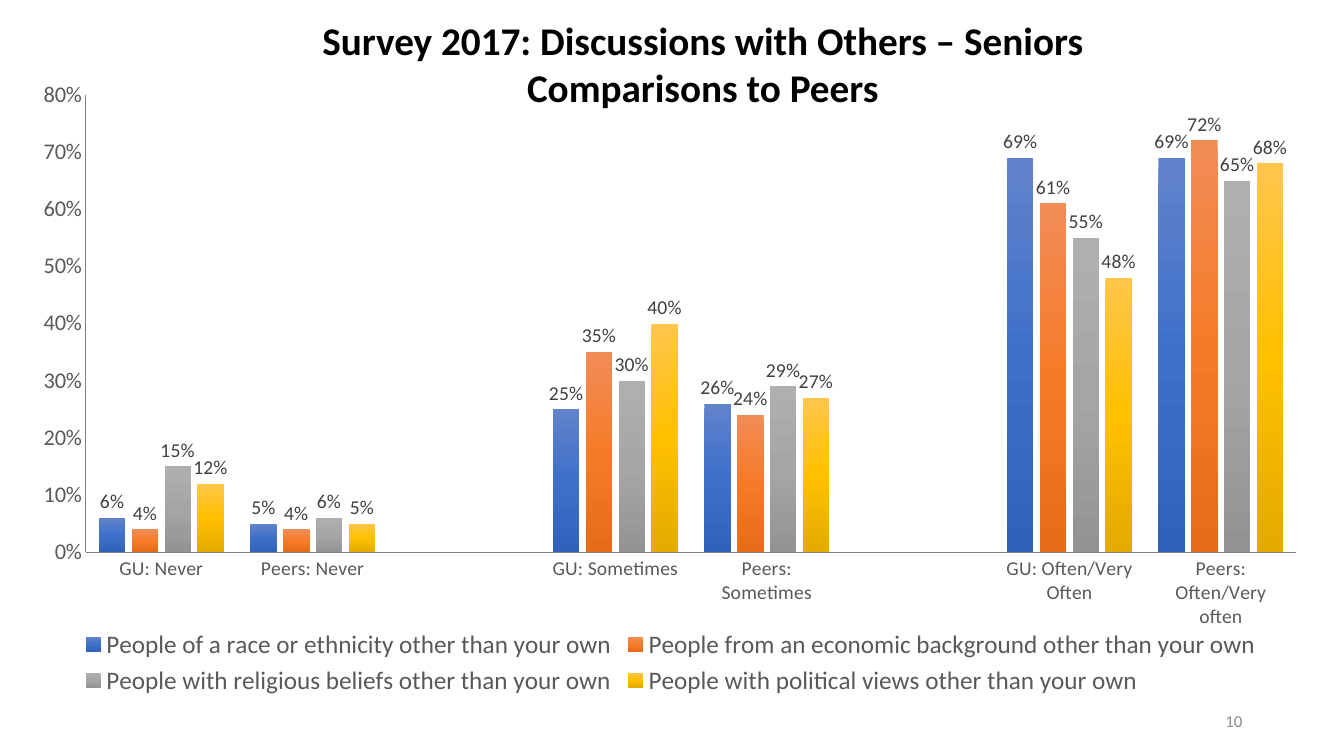
"""Build the slide comparing seniors' discussions with others to peers."""
from copy import deepcopy

from lxml import etree
from pptx import Presentation
from pptx.chart.data import CategoryChartData
from pptx.dml.color import RGBColor
from pptx.enum.chart import XL_CHART_TYPE, XL_LABEL_POSITION, XL_LEGEND_POSITION, XL_TICK_MARK
from pptx.enum.text import MSO_ANCHOR, PP_ALIGN
from pptx.oxml.ns import qn
from pptx.util import Inches, Pt

CLUSTERED = XL_CHART_TYPE.COLUMN_CLUSTERED
OUTSIDE_END = XL_LABEL_POSITION.OUTSIDE_END
BOTTOM = XL_LEGEND_POSITION.BOTTOM
NO_TICK = XL_TICK_MARK.NONE
MIDDLE, TOP = MSO_ANCHOR.MIDDLE, MSO_ANCHOR.TOP
CENTER, RIGHT = PP_ALIGN.CENTER, PP_ALIGN.RIGHT

FONT = "Calibri"
COLORS = {
    "title": "000000",
    "number": "8C8C8C",
    "axis_text": "595959",
    "axis_line": "808080",
    "label": "404040",
    "race": ["6183CB", "3E70CA", "3062BB"],
    "economic": ["F18C57", "F67B28", "E56C19"],
    "religious": ["AFAFAF", "A5A5A5", "939393"],
    "political": ["FFC64B", "FFC000", "E3AB00"],
}
CATEGORIES = ["GU: Never", "Peers: Never", "", "GU: Sometimes", "Peers: Sometimes", "",
              "GU: Often/Very Often", "Peers: Often/Very often"]
SERIES = {
    "race": ("People of a race or ethnicity other than your own",
             [0.06, 0.05, None, 0.25, 0.26, None, 0.69, 0.69]),
    "economic": ("People from an economic background other than your own",
                 [0.04, 0.04, None, 0.35, 0.24, None, 0.61, 0.72]),
    "religious": ("People with religious beliefs other than your own",
                  [0.15, 0.06, None, 0.3, 0.29, None, 0.55, 0.65]),
    "political": ("People with political views other than your own",
                  [0.12, 0.05, None, 0.4, 0.27, None, 0.48, 0.68]),
}
CHART_WIDTH, CHART_HEIGHT = 12.96, 6.28
PLOT_SHARES = {"x": 0.68 / CHART_WIDTH, "y": 0.27 / CHART_HEIGHT,
               "w": 12.01 / CHART_WIDTH, "h": 4.54 / CHART_HEIGHT}


def format_font(font, size, color, bold=False):
    font.name = FONT
    font.size = Pt(size)
    font.bold = bold
    font.color.rgb = RGBColor.from_string(COLORS[color])


def add_text(lines, box, size, color, bold=False, align=CENTER, anchor=TOP):
    shape = slide.shapes.add_textbox(*map(Inches, box))
    frame = shape.text_frame
    frame.word_wrap = True
    frame.vertical_anchor = anchor
    frame.text = "\n".join(lines)
    for paragraph in frame.paragraphs:
        paragraph.alignment = align
        format_font(paragraph.runs[0].font, size, color, bold)


presentation = Presentation()
presentation.slide_width = Inches(13.33)
presentation.slide_height = Inches(7.5)
slide = presentation.slides.add_slide(presentation.slide_layouts[6])

add_text(["10"], (9.42, 6.95, 3, 0.4), 12, "number", align=RIGHT, anchor=MIDDLE)
add_text(["Survey 2017: Discussions with Others – Seniors", "Comparisons to Peers"],
         (1.8, 0.11, 10.34, 1.04), 28, "title", bold=True)

chart_data = CategoryChartData(number_format="0%")
chart_data.categories = CATEGORIES
for name, values in SERIES.values():
    chart_data.add_series(name, values)
chart_box = map(Inches, (0.17, 0.67, CHART_WIDTH, CHART_HEIGHT))
chart = slide.shapes.add_chart(CLUSTERED, *chart_box, chart_data).chart
format_font(chart.font, 14, "title")
chart.has_title = False
chart.has_legend = True
chart.legend.position = BOTTOM
chart.legend.include_in_layout = False
format_font(chart.legend.font, 18, "axis_text")

for axis, size, line_width in ((chart.category_axis, 14, 1), (chart.value_axis, 16, 0.75)):
    axis.has_major_gridlines = False
    axis.major_tick_mark = axis.minor_tick_mark = NO_TICK
    axis.format.line.width = Pt(line_width)
    axis.format.line.color.rgb = RGBColor.from_string(COLORS["axis_line"])
    format_font(axis.tick_labels.font, size, "axis_text")
chart.value_axis.minimum_scale = 0
chart.value_axis.maximum_scale = 0.8
chart.value_axis.major_unit = 0.1
chart.value_axis.tick_labels.number_format = "0%"
chart.value_axis.tick_labels.number_format_is_linked = False

plot = chart.plots[0]
plot.gap_width = 100
plot.overlap = -24
plot.vary_by_categories = False
for key, series in zip(SERIES, plot.series):
    fill = series.format.fill
    fill.gradient()
    fill.gradient_angle = 270
    stop_list = series._element.find(".//" + qn("a:gsLst"))
    stop_list.append(deepcopy(stop_list[0]))
    for index, (stop, color) in enumerate(zip(stop_list, COLORS[key])):
        stop.set("pos", str(index * 50000))
        for child in list(stop):
            stop.remove(child)
        etree.SubElement(stop, qn("a:srgbClr"), val=color)
    labels = series.data_labels
    labels.show_value = True
    labels.position = OUTSIDE_END
    labels.number_format = "0%"
    labels.number_format_is_linked = False
    format_font(labels.font, 14, "label")

plot_area = chart._chartSpace.find(".//" + qn("c:plotArea"))
for old_layout in plot_area.findall(qn("c:layout")):
    plot_area.remove(old_layout)
layout = etree.Element(qn("c:layout"))
plot_area.insert(0, layout)
manual = etree.SubElement(layout, qn("c:manualLayout"))
settings = {"layoutTarget": "inner", "xMode": "edge", "yMode": "edge", **PLOT_SHARES}
for tag, value in settings.items():
    etree.SubElement(manual, qn("c:" + tag), val=str(value))

presentation.save("out.pptx")
